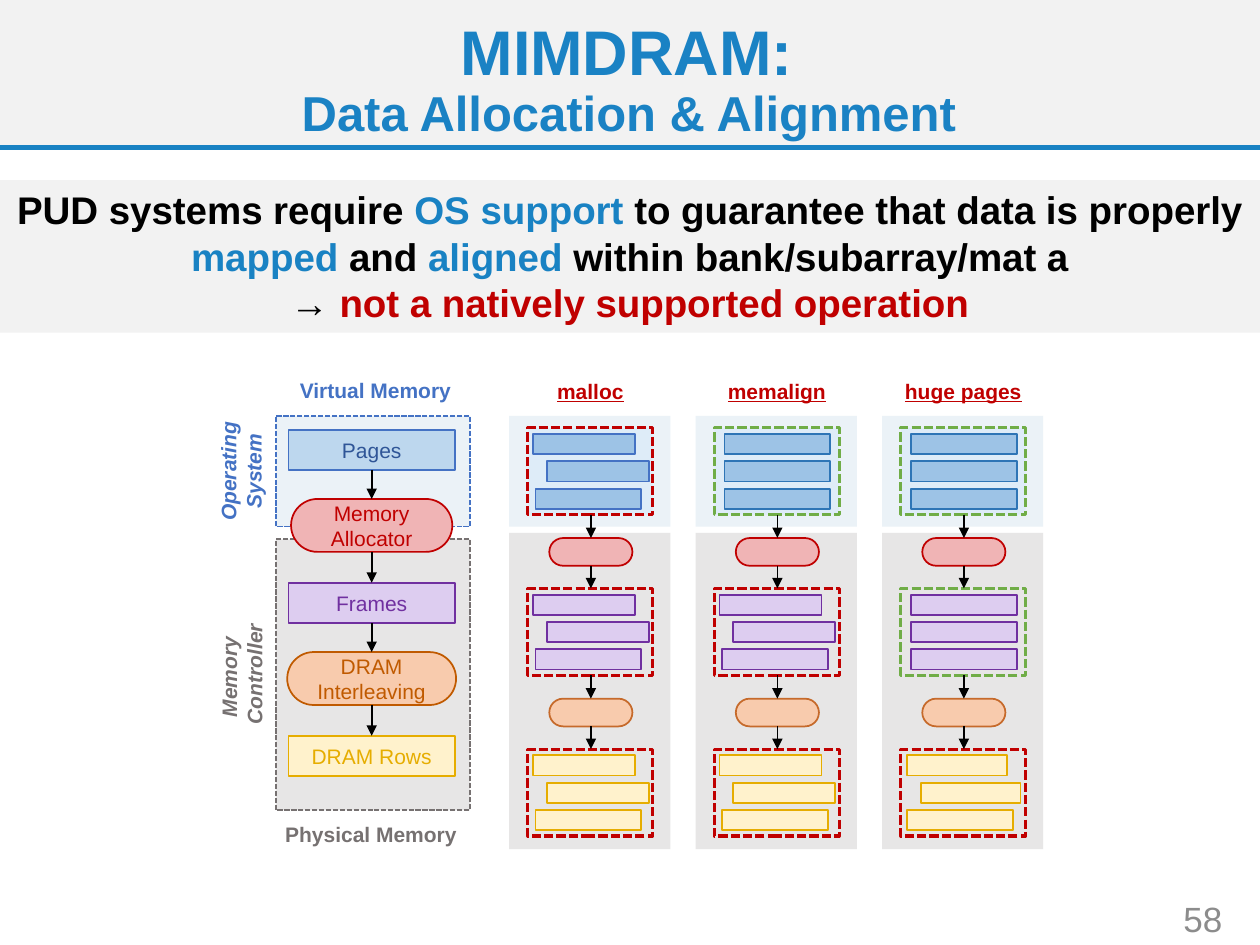
from dataclasses import dataclass

from lxml import etree
from pptx import Presentation
from pptx.dml.color import RGBColor
from pptx.enum.dml import MSO_LINE
from pptx.enum.shapes import MSO_CONNECTOR, MSO_SHAPE
from pptx.enum.text import MSO_ANCHOR, PP_ALIGN
from pptx.oxml.ns import qn
from pptx.util import Inches, Pt

RECT, PILL = MSO_SHAPE.RECTANGLE, MSO_SHAPE.ROUNDED_RECTANGLE
LINE = MSO_CONNECTOR.STRAIGHT
DASH = MSO_LINE.SQUARE_DOT
TOP, MID = MSO_ANCHOR.TOP, MSO_ANCHOR.MIDDLE
CENTER, RIGHT = PP_ALIGN.CENTER, PP_ALIGN.RIGHT

WIDE, HIGH = Inches(10), Inches(7.5)
CELL = WIDE / 100  # the grid has 100 columns and 75 rows


@dataclass(frozen=True)
class Theme:
    font: str = "Arial"
    title: int = 36
    sub: int = 28
    claim: int = 22
    page: int = 20
    label: int = 12
    black: str = "000000"
    band: str = "F2F2F2"
    head: str = "1A82C4"
    accent: str = "1982C3"
    number: str = "8C8C8C"
    red: str = "C00000"
    green: str = "70AD47"
    blue: str = "4472C4"
    navy: str = "2F5597"
    ocean: str = "2E75B6"
    sky: str = "BDD7EE"
    azure: str = "9DC3E6"
    ice: str = "DEECF8"
    mist: str = "EBF2F7"
    grey: str = "767171"
    ash: str = "E7E6E6"
    purple: str = "7030A0"
    lilac: str = "DDCDF0"
    gold: str = "E6AD00"
    cream: str = "FFF2CC"
    pink: str = "F0B4B5"
    peach: str = "F8CBAD"
    rust: str = "C05A00"
    copper: str = "C66A2B"


T = Theme()

# Bars in a frame: left edge and width
EVEN = [(0.8, 8.4)] * 3
LOOSE = [(0.4, 8.1), (1.5, 8.1), (0.6, 8.4)]
SPREAD = [(0.5, 7.9), (1.6, 7.9), (0.5, 8.4)]

# Per method: name, page bar line, then edge colour and bars of each stage
METHODS = [
    ("malloc", T.blue, [(T.red, LOOSE)] * 3),
    ("memalign", T.ocean, [(T.green, EVEN), (T.red, LOOSE), (T.red, LOOSE)]),
    ("huge pages", T.ocean, [(T.green, EVEN), (T.green, EVEN), (T.red, SPREAD)]),
]


def grid(*cells):
    return [round(c * CELL) for c in cells]


def color(code):
    return RGBColor.from_string(code)


def write(shape, rows, size=T.label, anchor=MID, align=CENTER, space=None,
          inset=None, **style):
    """Fill a shape with rows of (text, colour[, size]) runs."""
    frame = shape.text_frame
    frame.word_wrap = True
    frame.vertical_anchor = anchor
    if inset is not None:
        for side in ("left", "right", "top", "bottom"):
            setattr(frame, "margin_" + side, inset)
    for i, row in enumerate(rows):
        para = frame.add_paragraph() if i else frame.paragraphs[0]
        para.alignment = align
        if space:
            para.line_spacing = space
        for text, tint, *own in row:
            run = para.add_run()
            run.text = text.rstrip("\n")
            look = {"name": T.font, "size": Pt(own[0] if own else size), **style}
            for key, value in look.items():
                setattr(run.font, key, value)
            run.font.color.rgb = color(tint)
            if text.endswith("\n"):
                para.add_line_break()


def label(on, at, rows, turn=0, **style):
    box = on.add_textbox(*grid(*at))
    box.rotation = turn
    write(box, rows, **style)


def block(on, at, fill, edge=None, kind=RECT, width=1, dash=None):
    shape = on.add_shape(kind, *grid(*at))
    shape.shadow.inherit = False
    shape.fill.solid()
    shape.fill.fore_color.rgb = color(fill)
    if kind == PILL:
        shape.adjustments[0] = 0.5
    if edge:
        shape.line.color.rgb = color(edge)
        shape.line.width = Pt(width)
        shape.line.dash_style = dash
    else:
        shape.line.fill.background()
    return shape


def rule(on, ends, tint=T.black, width=1, arrow=True):
    line = on.add_connector(LINE, *grid(*ends))
    line.line.color.rgb = color(tint)
    line.line.width = Pt(width)
    props = line._element.spPr
    if arrow:
        etree.SubElement(props.find(qn("a:ln")), qn("a:tailEnd"), type="triangle")
    etree.SubElement(props, qn("a:effectLst"))


def header(on):
    block(on, (0, 0, 100, 11.7), T.band)
    label(on, (87.2, 70.9, 10.8, 4), [[("58", T.number)]], size=T.page, align=RIGHT)
    rule(on, (0, 11.7, 100, 11.7), T.accent, 3, arrow=False)
    label(on, (1.8, 1.4, 97.3, 10.1),
          [[("MIMDRAM: \n", T.head), ("Data Allocation & Alignment ", T.head, T.sub)]],
          size=T.title, space=0.9, bold=True)


def claim(on):
    rows = [
        [("PUD systems require ", T.black), ("OS support ", T.accent),
         ("to guarantee that data is properly ", T.black), ("mapped", T.accent),
         (" and ", T.black), ("aligned ", T.accent),
         ("within bank/subarray/mat a", T.black)],
        [("→ ", T.black), ("not a natively supported operation", T.red)],
    ]
    write(block(on, (0, 14.3, 100, 12.1), T.band), rows,
          size=T.claim, anchor=TOP, bold=True)


def flow(on):
    """Draw the path from virtual pages down to DRAM rows."""
    block(on, (21.9, 42.8, 15.4, 21.5), T.ash, T.grey, dash=DASH)
    block(on, (21.9, 33, 15.4, 8.8), T.mist, T.blue, dash=DASH)
    label(on, (21.9, 29.1, 15.8, 3.8), [[("Virtual Memory", T.blue)]], bold=True)
    label(on, (20.8, 64.3, 17.3, 3.8), [[("Physical Memory", T.grey)]], bold=True)
    side = {"turn": 270, "inset": 0, "bold": True, "italic": True}
    label(on, (14.7, 35.4, 8.8, 4), [[("Operating System", T.blue)]], **side)
    label(on, (8.4, 51.5, 21.5, 4),
          [[("Memory \n", T.grey), ("Controller", T.grey)]], **side)

    mid, first, step = 29.5, 34.1, 12.15
    steps = [("Pages", T.sky, T.blue, T.navy),
             ("Frames", T.lilac, T.purple, T.purple),
             ("DRAM Rows", T.cream, T.gold, T.gold)]
    for i, (text, fill, edge, ink) in enumerate(steps):
        box = block(on, (mid - 6.6, first + i * step, 13.2, 3.2), fill, edge)
        write(box, [[(text, ink)]])
    links = [("Memory Allocator", T.pink, T.red, 12.8),
             ("DRAM Interleaving", T.peach, T.rust, 13.4)]
    for i, (text, fill, ink, wide) in enumerate(links):
        top = first + i * step
        box = block(on, (mid - wide / 2, top + 5.5, wide, 4.2), fill, ink, PILL)
        write(box, [[(text, ink)]])
        rule(on, (mid, top + 3.2, mid, top + 5.5))
        rule(on, (mid, top + 9.7, mid, top + step))


def panel(on, left, name, edge, stages):
    """Draw one allocation method as three stages joined by two links."""
    block(on, (left, 42.3, 12.8, 25.1), T.ash)
    block(on, (left, 33, 12.8, 8.8), T.mist)
    label(on, (left, 29.4, 12.9, 3.2), [[(name, T.red)]], bold=True, underline=True)

    first, step, pitch, mid = 33.95, 12.75, 2.17, left + 6.5
    tints = [(T.ice, T.azure, edge), (T.ash, T.lilac, T.purple),
             (T.ash, T.cream, T.gold)]
    for i, ((rim, bars), (back, fill, line)) in enumerate(zip(stages, tints)):
        top = first + i * step
        block(on, (left + 1.5, top, 9.9, 6.9), back, rim, width=1.75, dash=DASH)
        for j, (shift, wide) in enumerate(bars):
            at = (left + 1.5 + shift, top + 0.5 + j * pitch, wide, 1.6)
            block(on, at, fill, line)
    for i, (fill, line) in enumerate([(T.pink, T.red), (T.peach, T.copper)]):
        top = first + i * step
        block(on, (mid - 3.3, top + 8.75, 6.6, 2.2), fill, line, PILL)
        rule(on, (mid, top + 6.9, mid, top + 8.75))
        rule(on, (mid, top + 10.95, mid, top + step))


def main():
    deck = Presentation()
    deck.slide_width, deck.slide_height = WIDE, HIGH
    shapes = deck.slides.add_slide(deck.slide_layouts[6]).shapes
    header(shapes)
    claim(shapes)
    flow(shapes.add_group_shape().shapes)
    for i, method in enumerate(METHODS):
        panel(shapes.add_group_shape().shapes, 40.4 + i * 14.8, *method)
    deck.save("out.pptx")


if __name__ == "__main__":
    main()
